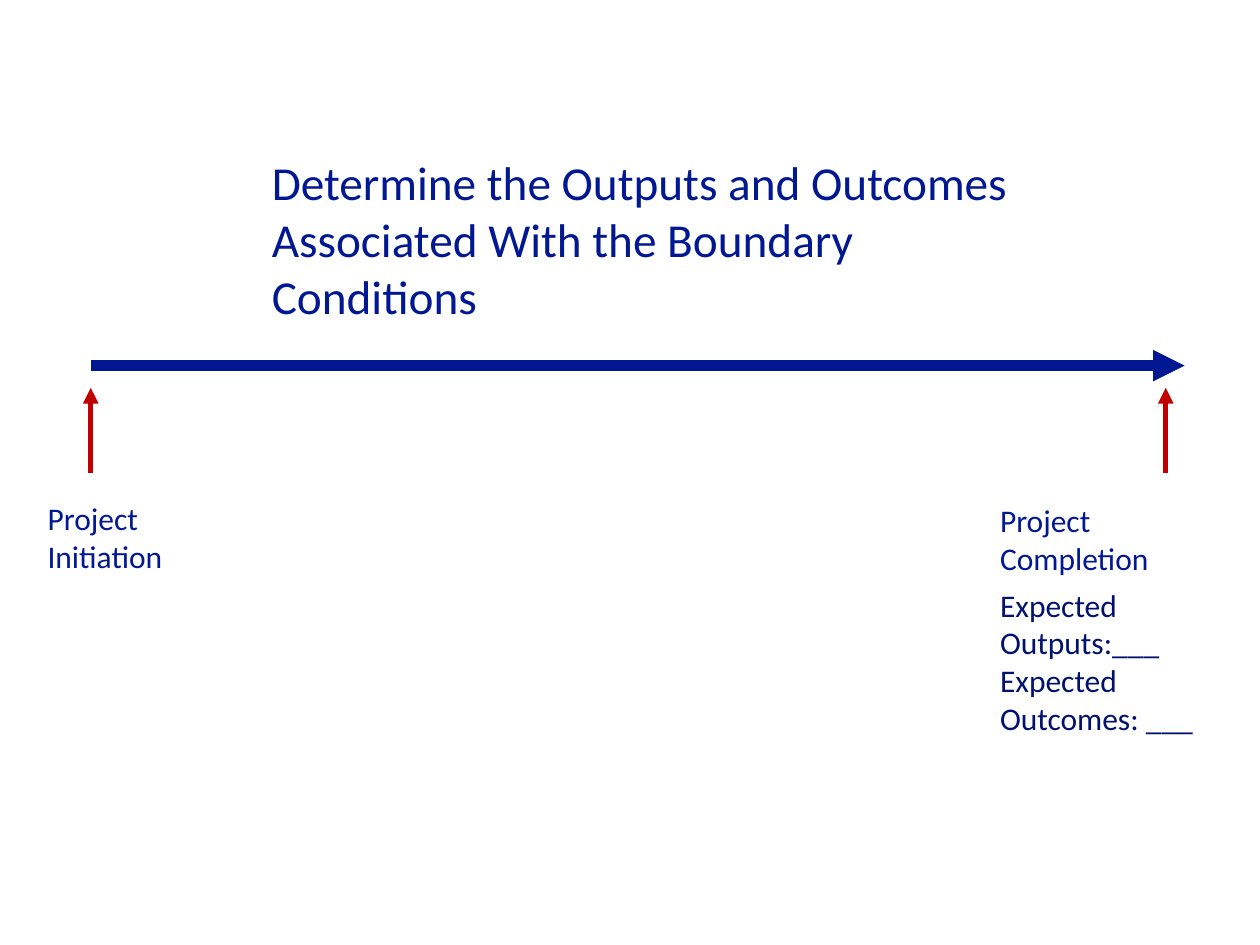
from dataclasses import dataclass

from lxml.etree import SubElement
from pptx import Presentation
from pptx.dml.color import RGBColor
from pptx.enum.shapes import MSO_CONNECTOR
from pptx.enum.text import MSO_AUTO_SIZE
from pptx.oxml.ns import qn
from pptx.slide import Slide
from pptx.util import Cm, Pt

COLORS = {"navy": "011892", "dark_navy": "01126E", "red": "C00000"}
FONT = "Calibri"

# Shared positions, in centimetres
START_X, FINISH_X = 1.83, 23.5
TIMELINE_Y, TIMELINE_END_X = 7.37, 23.88
MARKER_TOP, MARKER_BOTTOM = 7.82, 9.53
COMPLETION_LEFT = 19.91


@dataclass(frozen=True)
class Arrow:
    start: tuple[float, float]
    end: tuple[float, float]
    color: str
    weight: float


@dataclass(frozen=True)
class Label:
    text: str
    left: float
    top: float
    width: float
    height: float
    size: float = 18
    color: str = "navy"


ARROWS = [
    Arrow((START_X, TIMELINE_Y), (TIMELINE_END_X, TIMELINE_Y), "navy", 6),
    *(Arrow((x, MARKER_BOTTOM), (x, MARKER_TOP), "red", 3) for x in (START_X, FINISH_X)),
]

LABELS = [
    Label("Project Initiation", 0.71, 9.93, 3.48, 1.8),
    Label("Project Completion", COMPLETION_LEFT, 9.98, 4.37, 1.8),
    Label("Determine the Outputs and Outcomes Associated With the Boundary Conditions",
          5.23, 2.97, 16.41, 3.71, size=27),
    Label("Expected Outputs:___\nExpected Outcomes: ___",
          COMPLETION_LEFT, 11.68, 5.26, 3.91, color="dark_navy"),
]


def draw_arrow(slide: Slide, arrow: Arrow) -> None:
    connector = slide.shapes.add_connector(
        MSO_CONNECTOR.STRAIGHT, *map(Cm, arrow.start + arrow.end))
    connector.line.color.rgb = RGBColor.from_string(COLORS[arrow.color])
    connector.line.width = Pt(arrow.weight)
    SubElement(connector.line._get_or_add_ln(), qn("a:tailEnd"), type="triangle")
    SubElement(connector._element.spPr, qn("a:effectLst"))


def draw_label(slide: Slide, label: Label) -> None:
    box = slide.shapes.add_textbox(
        *map(Cm, (label.left, label.top, label.width, label.height)))
    frame = box.text_frame
    frame.text = label.text
    frame.word_wrap = True
    frame.auto_size = MSO_AUTO_SIZE.SHAPE_TO_FIT_TEXT
    for paragraph in frame.paragraphs:
        for run in paragraph.runs:
            run.font.name = FONT
            run.font.size = Pt(label.size)
            run.font.color.rgb = RGBColor.from_string(COLORS[label.color])


def main() -> None:
    presentation = Presentation()
    presentation.slide_width, presentation.slide_height = Cm(25.4), Cm(19.05)
    slide = presentation.slides.add_slide(presentation.slide_layouts[6])
    for arrow in ARROWS:
        draw_arrow(slide, arrow)
    for label in LABELS:
        draw_label(slide, label)
    presentation.save("out.pptx")


if __name__ == "__main__":
    main()
